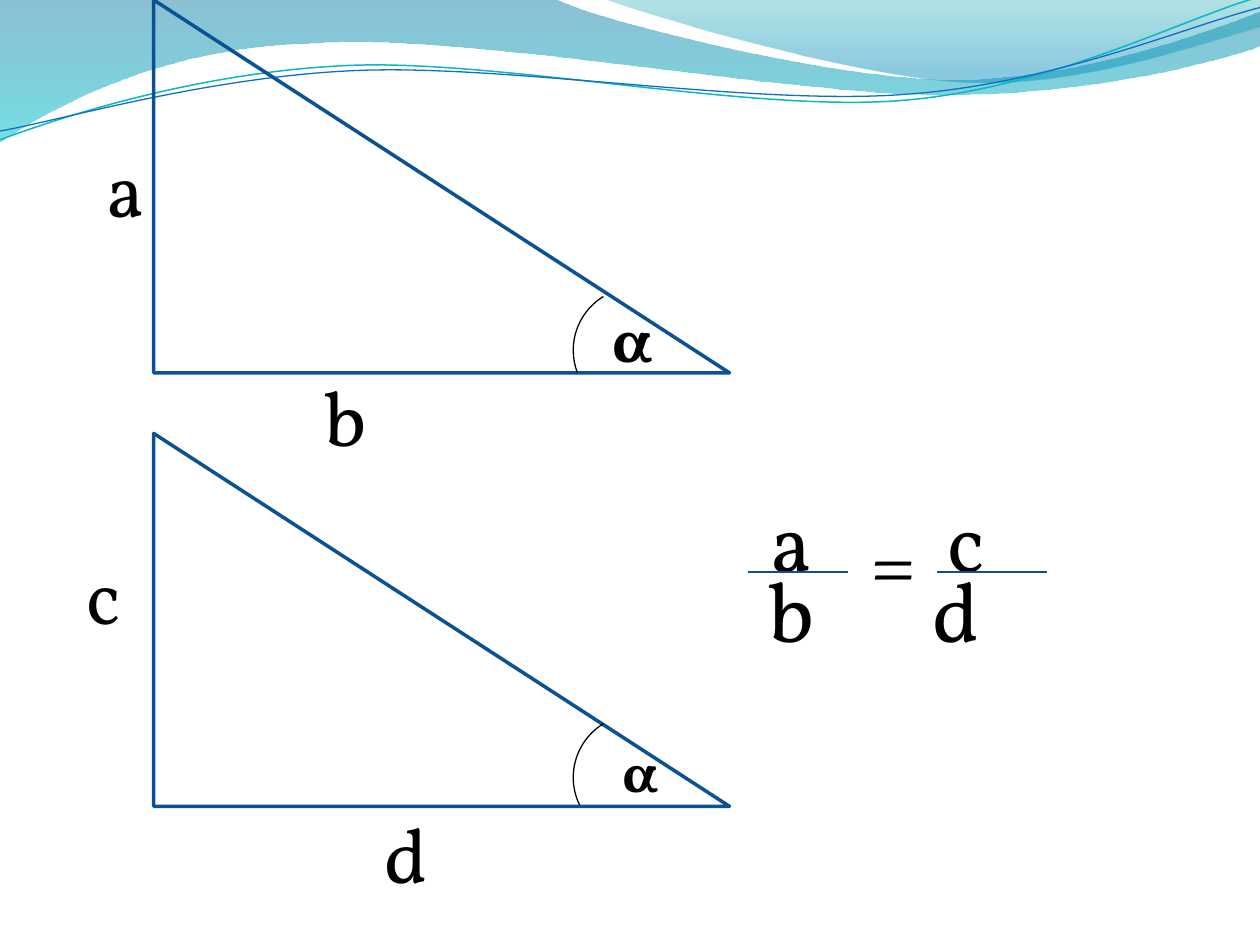
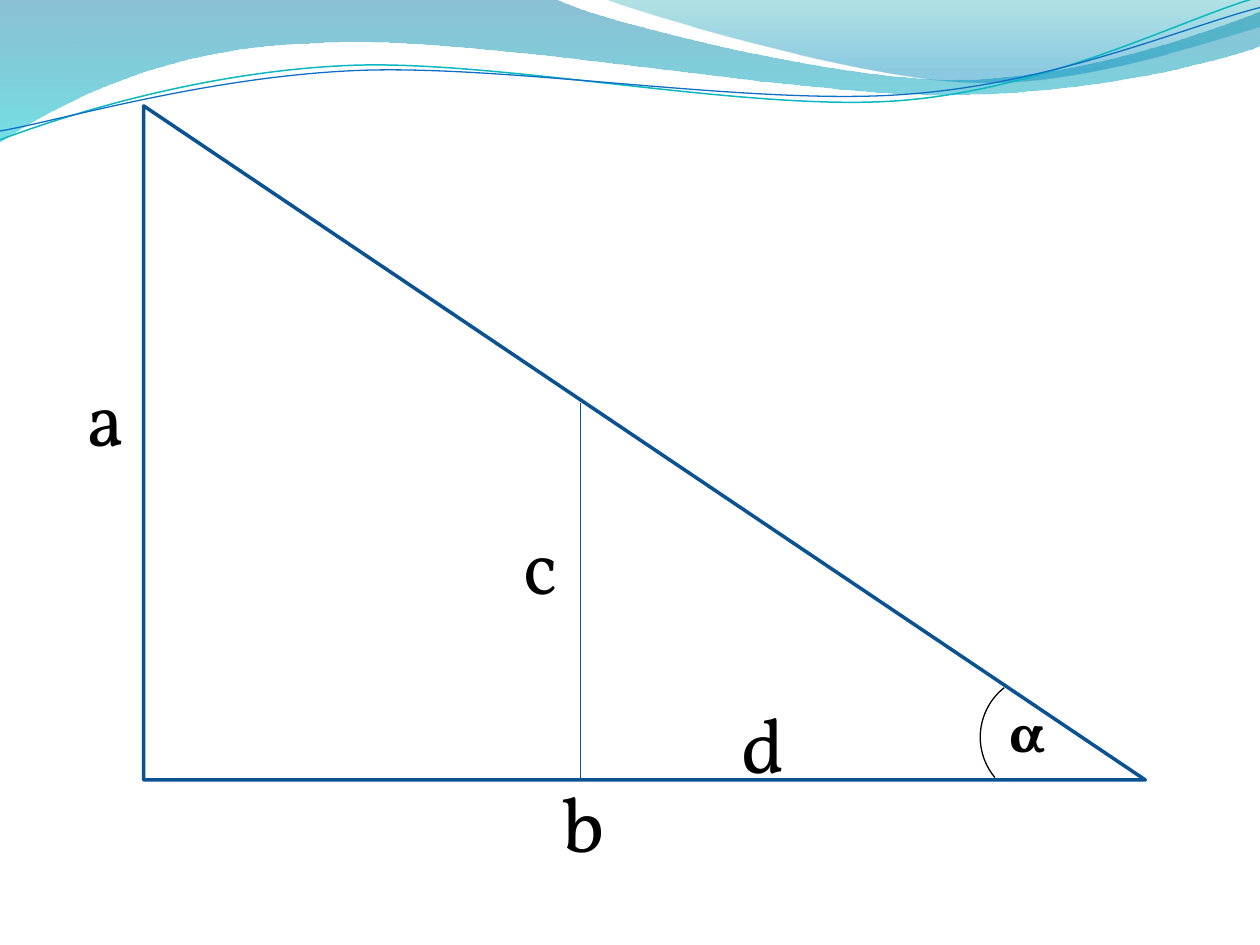
from lxml import etree
from pptx import Presentation
from pptx.dml.color import RGBColor
from pptx.enum.shapes import MSO_CONNECTOR, MSO_SHAPE as Shape
from pptx.enum.text import MSO_AUTO_SIZE as AutoSize
from pptx.oxml.ns import qn
from pptx.util import Inches, Pt

COLORS = {
    "ink": "000000",
    "edge": "0B5292",
    "thin": "095295",
    "wave_teal": "0AB8BF",
    "wave_blue": "0F6FC6",
}
FONT = "Vollkorn"

# A segment is one point (straight) or two control points and an end (curve).
# Gradient stops: position, colour, opacity in percent.
WAVE_BANDS = [
    ((0, 0), [
        [(4.4, -0.01)],
        [(4.76, 0.17), (6.64, 0.63), (7.58, 0.63)],
        [(8.53, 0.63), (9.58, 0.26), (10, 0.09)],
        [(10.01, 0.36)],
        [(9.83, 0.44), (8.7, 0.76), (7.46, 0.75)],
        [(6.22, 0.75), (3.82, 0.28), (2.57, 0.34)],
        [(1.29, 0.36), (0.46, 0.83), (-0.01, 1.13)],
        [(0, 0)],
    ], [(0, "0074A1", 45), (1, "00C6CF", 55)]),
    ((4.79, -0.01), [
        [(5.09, 0.11), (6.82, 0.62), (7.69, 0.65)],
        [(8.56, 0.69), (9.61, 0.32), (10, 0.21)],
        [(10, 0)],
        [(4.79, -0.01)],
    ], [(0, "00A1A9", 30), (0.8, "008BBF", 45)]),
]
WAVE_LINES = [
    ((0, 1.11), [
        [(0.48, 0.93), (1.58, 0.57), (2.77, 0.52)],
        [(3.95, 0.47), (5.93, 0.89), (7.13, 0.8)],
        [(8.33, 0.71), (9.38, 0.15), (9.98, -0.02)],
    ], "wave_teal", 0.85),
    ((0, 1.04), [
        [(0.47, 0.96), (1.64, 0.61), (2.83, 0.56)],
        [(4.03, 0.51), (5.97, 0.84), (7.17, 0.75)],
        [(8.36, 0.67), (9.41, 0.21), (10, 0.06)],
    ], "wave_blue", 0.75),
]


def bend(shape, segments):
    """Turn each run of three straight steps of the outline into one curve."""
    steps = iter(list(shape.element.spPr.iter(qn("a:lnTo"))))
    for segment in segments:
        first, *others = [next(steps) for _ in segment]
        if others:
            first.tag = qn("a:cubicBezTo")
        for step in others:
            first.append(step[0])
            step.getparent().remove(step)


class Sketch:
    """Holds the deck, its style and the page being drawn."""

    def __init__(self):
        self.deck = Presentation()
        self.deck.slide_width, self.deck.slide_height = Inches(10), Inches(7.5)
        self.layout = self.deck.slide_layouts[6]
        self.new_page()
        self.waves()

    def new_page(self):
        self.page = self.deck.slides.add_slide(self.layout)

    def waves(self):
        """Draw the waves on the first page and move them to the shared layout."""
        for holder in list(self.layout.placeholders):
            holder.element.getparent().remove(holder.element)
        for start, segments, stops in WAVE_BANDS:
            self.gradient(self.outline(start, segments, close=True), stops)
        for start, segments, color, width in WAVE_LINES:
            wave = self.outline(start, segments, close=False)
            wave.fill.background()
            self.stroke(wave, color, width)
        for wave in list(self.page.shapes):
            self.layout.shapes.element.append(wave.element)

    def outline(self, start, segments, close):
        points = [(Inches(x), Inches(y)) for segment in segments for x, y in segment]
        builder = self.page.shapes.build_freeform(Inches(start[0]), Inches(start[1]))
        builder.add_line_segments(points, close=close)
        shape = builder.convert_to_shape()
        shape.shadow.inherit = False
        bend(shape, segments)
        return shape

    def gradient(self, shape, stops):
        """Fill from top to bottom with translucent colours."""
        shape.line.fill.background()
        shape.fill.gradient()
        shape.fill.gradient_angle = 270
        for stop, (position, color, _) in zip(shape.fill.gradient_stops, stops):
            stop.position = position
            stop.color.rgb = RGBColor.from_string(color)
        for node, (_, _, opacity) in zip(shape.element.spPr.iter(qn("a:srgbClr")), stops):
            etree.SubElement(node, qn("a:alpha"), val=str(opacity * 1000))

    def stroke(self, shape, color, width):
        shape.line.color.rgb = RGBColor.from_string(COLORS[color])
        shape.line.width = Pt(width)

    def preset(self, kind, left, top, width, height, color, line_width):
        shape = self.page.shapes.add_shape(
            kind, Inches(left), Inches(top), Inches(width), Inches(height))
        shape.shadow.inherit = False
        shape.fill.background()
        self.stroke(shape, color, line_width)
        return shape

    def triangle(self, left, top, width, height):
        self.preset(Shape.RIGHT_TRIANGLE, left, top, width, height, "edge", 2)

    def angle_arc(self, left, top, start, end):
        arc = self.preset(Shape.ARC, left, top, 1, 1, "ink", 0.75)
        arc.rotation = 239.6
        arc.adjustments[0], arc.adjustments[1] = start, end

    def line(self, x1, y1, x2, y2):
        line = self.page.shapes.add_connector(
            MSO_CONNECTOR.STRAIGHT, Inches(x1), Inches(y1), Inches(x2), Inches(y2))
        self.stroke(line, "thin", 0.75)
        etree.SubElement(line.element.spPr, qn("a:effectLst"))

    def label(self, text, left, top, width, height=0.84, size=44, bold=False, tab=None):
        box = self.page.shapes.add_textbox(
            Inches(left), Inches(top), Inches(width), Inches(height))
        frame = box.text_frame
        frame.word_wrap = True
        frame.auto_size = AutoSize.SHAPE_TO_FIT_TEXT
        frame.text = text
        para = frame.paragraphs[0]
        for span in para.runs:
            span.font.name = FONT
            span.font.size = Pt(size)
            span.font.bold = bold
            span.font.color.rgb = RGBColor.from_string(COLORS["ink"])
        if tab:
            tabs = etree.SubElement(para._p.get_or_add_pPr(), qn("a:tabLst"))
            etree.SubElement(tabs, qn("a:tab"), pos=str(Inches(tab)), algn="l")


def draw_similar_triangles(sketch):
    sketch.triangle(1.22, 0, 4.57, 2.96)
    sketch.label("a", 0.75, 1.07, 0.63)
    sketch.label("b", 2.48, 2.88, 0.94)
    sketch.angle_arc(4.55, 2.28, 167.88, 215.41)
    sketch.label("α", 4.76, 2.33, 0.55, 0.71, size=36, bold=True)

    sketch.triangle(1.22, 3.44, 4.57, 2.96)
    sketch.angle_arc(4.55, 5.67, 164.68, 215.41)
    sketch.label("α", 4.84, 5.8, 0.31, 0.64, size=32, bold=True)
    sketch.label("c", 0.59, 4.3, 0.79)
    sketch.label("d", 2.95, 6.35, 0.79)

    sketch.label("a\tc", 6.02, 3.83, 3.98, 0.91, size=48, tab=1.4)
    for left, right in ((5.94, 6.73), (7.44, 8.31)):
        sketch.line(left, 4.54, right, 4.54)
    sketch.label("b\td", 6, 4.38, 3.1, 0.91, size=48, tab=1.3)
    sketch.label("=", 6.81, 3.99, 0.63, 0.91, size=48)


def draw_nested_triangles(sketch):
    sketch.triangle(1.14, 0.84, 7.95, 5.35)
    sketch.line(4.61, 3.2, 4.61, 6.19)
    sketch.label("a", 0.59, 2.88, 0.79)
    sketch.label("b", 4.37, 6.11, 1.34)
    sketch.label("c", 4.06, 4.06, 0.87)
    sketch.label("d", 5.79, 5.48, 0.94)
    sketch.angle_arc(7.78, 5.35, 156.34, 211.23)
    sketch.label("α", 7.91, 5.48, 0.71, 0.64, size=32, bold=True)


def main():
    sketch = Sketch()
    draw_similar_triangles(sketch)
    sketch.new_page()
    draw_nested_triangles(sketch)
    sketch.deck.save("out.pptx")


if __name__ == "__main__":
    main()
